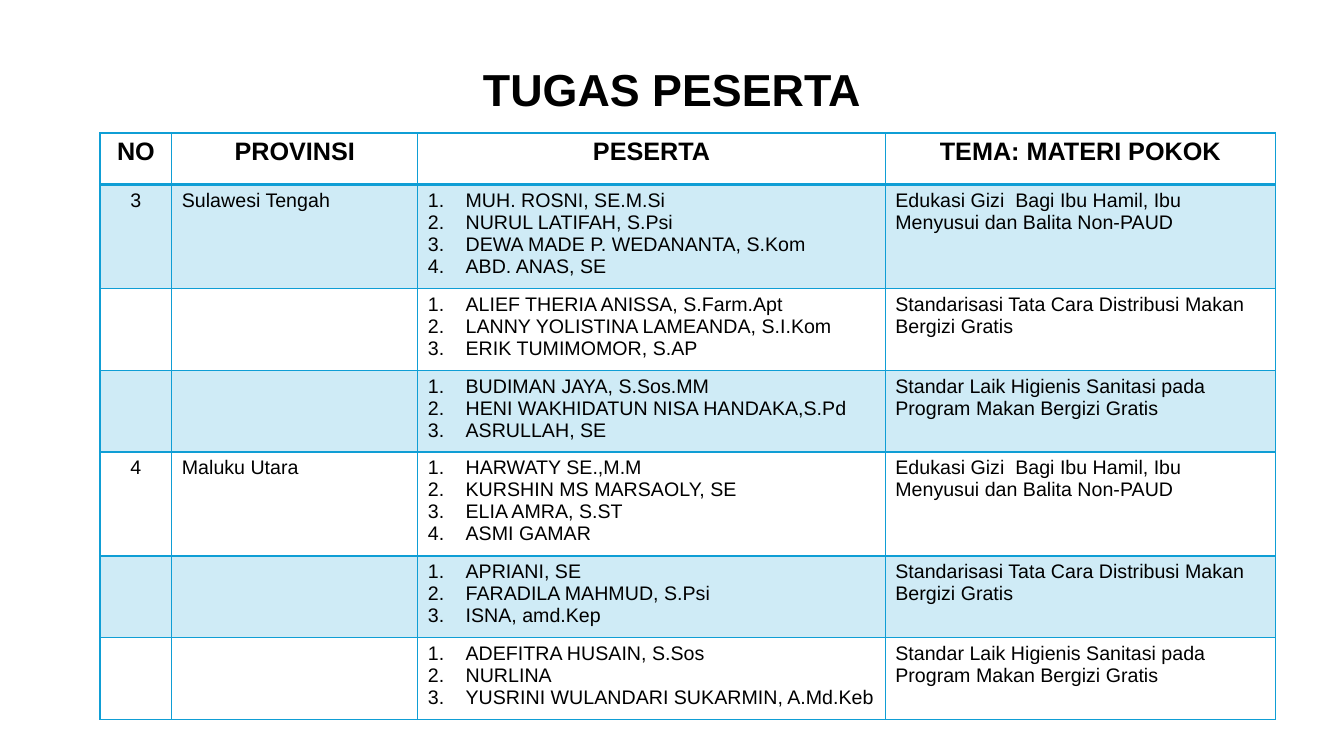
from lxml import etree
from pptx import Presentation
from pptx.dml.color import RGBColor
from pptx.enum.text import MSO_AUTO_SIZE, PP_ALIGN
from pptx.oxml.ns import qn
from pptx.util import Cm, Pt

LEFT, CENTER = PP_ALIGN.LEFT, PP_ALIGN.CENTER
GROW = MSO_AUTO_SIZE.SHAPE_TO_FIT_TEXT
BLUE = "0F9ED5"
BLACK = "000000"


def color(hex_value):
    return RGBColor.from_string(hex_value)


def add_text(tf, lines, size=14, bold=False, align=LEFT, numbered=False):
    for i, line in enumerate(lines):
        p = tf.paragraphs[0] if i == 0 else tf.add_paragraph()
        p.alignment = align
        if numbered:
            pPr = p._p.get_or_add_pPr()
            pPr.set("marL", str(Cm(0.95)))
            pPr.set("indent", str(-Cm(0.95)))
            etree.SubElement(pPr, qn("a:buFont"), typeface="+mj-lt")
            etree.SubElement(pPr, qn("a:buAutoNum"), type="arabicPeriod")
        r = p.add_run()
        r.text = line
        r.font.name = "Arial"
        r.font.size = Pt(size)
        r.font.bold = bold
        r.font.color.rgb = color(BLACK)


prs = Presentation()
prs.slide_width, prs.slide_height = Cm(33.87), Cm(19.05)
s = prs.slides.add_slide(prs.slide_layouts[6])

# Content
headers = ["NO", "PROVINSI", "PESERTA", "TEMA: MATERI POKOK"]
themes = [
    "Edukasi Gizi  Bagi Ibu Hamil, Ibu Menyusui dan Balita Non-PAUD",
    "Standarisasi Tata Cara Distribusi Makan Bergizi Gratis",
    "Standar Laik Higienis Sanitasi pada Program Makan Bergizi Gratis",
]
provinces = [
    ("3", "Sulawesi Tengah", [
        ["MUH. ROSNI, SE.M.Si", "NURUL LATIFAH, S.Psi",
         "DEWA MADE P. WEDANANTA, S.Kom", "ABD. ANAS, SE"],
        ["ALIEF THERIA ANISSA, S.Farm.Apt",
         "LANNY YOLISTINA LAMEANDA, S.I.Kom", "ERIK TUMIMOMOR, S.AP"],
        ["BUDIMAN JAYA, S.Sos.MM", "HENI WAKHIDATUN NISA HANDAKA,S.Pd",
         "ASRULLAH, SE"],
    ]),
    ("4", "Maluku Utara", [
        ["HARWATY SE.,M.M", "KURSHIN MS MARSAOLY, SE", "ELIA AMRA, S.ST",
         "ASMI GAMAR"],
        ["APRIANI, SE", "FARADILA MAHMUD, S.Psi", "ISNA, amd.Kep"],
        ["ADEFITRA HUSAIN, S.Sos", "NURLINA",
         "YUSRINI WULANDARI SUKARMIN, A.Md.Keb"],
    ]),
]

# Table grid
widths = [1.81, 6.2, 11.78, 9.83]
heights = [1.3, 2.62, 2.06, 2.06, 2.62, 2.06, 2.06]
table = s.shapes.add_table(len(heights), len(widths), Cm(2.52), Cm(3.35),
                           Cm(sum(widths)), Cm(sum(heights))).table
table.first_row = False
table.horz_banding = False
for column, width in zip(table.columns, widths):
    column.width = Cm(width)
for row, height in zip(table.rows, heights):
    row.height = Cm(height)

# Borders and row shading
for i, row in enumerate(table.rows):
    for cell in row.cells:
        tcPr = cell._tc.get_or_add_tcPr()
        for side in ("L", "R", "T", "B"):
            thick = (i, side) in ((0, "B"), (1, "T"))
            ln = etree.SubElement(tcPr, qn("a:ln" + side),
                                  w=str(Pt(2 if thick else 1)))
            line_fill = etree.SubElement(ln, qn("a:solidFill"))
            etree.SubElement(line_fill, qn("a:srgbClr"), val=BLUE)
        if i % 2:
            cell.fill.solid()
            cell.fill.fore_color.rgb = color(BLUE)
            srgb = tcPr.find(qn("a:solidFill")).find(qn("a:srgbClr"))
            etree.SubElement(srgb, qn("a:alpha"), val="20000")
        else:
            cell.fill.background()

# Header row
for j, header in enumerate(headers):
    add_text(table.cell(0, j).text_frame, [header], size=18, bold=True,
             align=CENTER)

# Participants by province and theme
for k, (number, province, groups) in enumerate(provinces):
    first = 1 + k * len(themes)
    add_text(table.cell(first, 0).text_frame, [number], align=CENTER)
    add_text(table.cell(first, 1).text_frame, [province])
    for i, (names, theme) in enumerate(zip(groups, themes), start=first):
        add_text(table.cell(i, 2).text_frame, names, numbered=True)
        add_text(table.cell(i, 3).text_frame, [theme])

# Title
sp = s.shapes.add_textbox(Cm(7.7), Cm(1.42), Cm(18.47), Cm(1.63))
tf = sp.text_frame
tf.word_wrap = True
tf.auto_size = GROW
add_text(tf, ["TUGAS PESERTA"], size=32, bold=True, align=CENTER)

prs.save("out.pptx")
